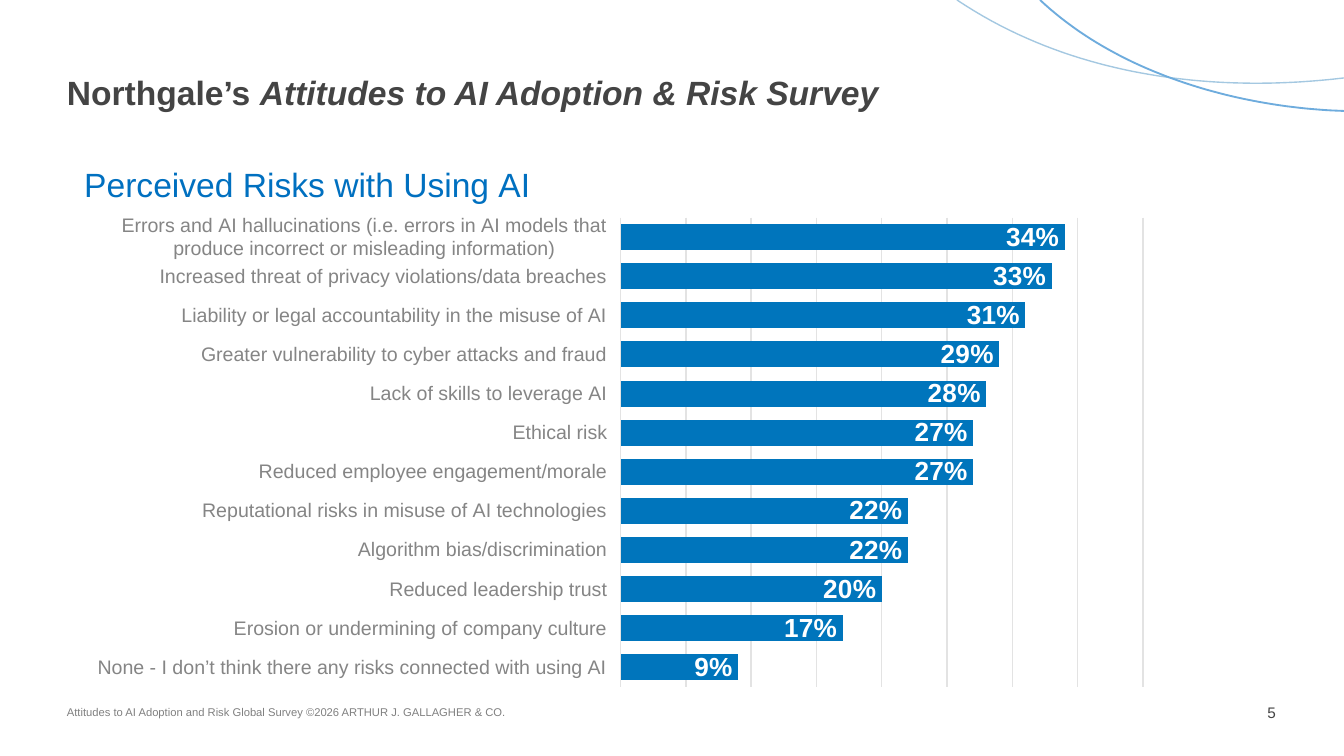
from lxml import etree
from pptx import Presentation
from pptx.chart.data import CategoryChartData
from pptx.dml.color import RGBColor
from pptx.enum.chart import XL_CHART_TYPE, XL_LABEL_POSITION, XL_TICK_LABEL_POSITION, XL_TICK_MARK
from pptx.enum.text import MSO_ANCHOR, PP_ALIGN
from pptx.oxml.ns import qn
from pptx.util import Emu, Pt

BAR = XL_CHART_TYPE.BAR_CLUSTERED
INSIDE_END = XL_LABEL_POSITION.INSIDE_END
LABELS_LOW = XL_TICK_LABEL_POSITION.LOW
NO_TICK = XL_TICK_MARK.NONE
TOP, MIDDLE = MSO_ANCHOR.TOP, MSO_ANCHOR.MIDDLE
LEFT, RIGHT = PP_ALIGN.LEFT, PP_ALIGN.RIGHT

INK = RGBColor(0x44, 0x44, 0x44)
FOOTER_GREY = RGBColor(0x80, 0x80, 0x80)
LABEL_GREY = RGBColor(0x85, 0x85, 0x85)
GRID_GREY = RGBColor(0xE3, 0xE3, 0xE3)
HEADING_BLUE = RGBColor(0x00, 0x70, 0xC0)
BAR_BLUE = RGBColor(0x00, 0x75, 0xBC)
PALE_ARC = RGBColor(0xA4, 0xC8, 0xE1)
BRIGHT_ARC = RGBColor(0x6E, 0xAC, 0xDD)
WHITE = RGBColor(0xFF, 0xFF, 0xFF)

RISKS = [
    ("None - I don’t think there any risks connected with using AI", 0.09),
    ("Erosion or undermining of company culture", 0.17),
    ("Reduced leadership trust", 0.20),
    ("Algorithm bias/discrimination", 0.22),
    ("Reputational risks in misuse of AI technologies", 0.22),
    ("Reduced employee engagement/morale", 0.27),
    ("Ethical risk", 0.27),
    ("Lack of skills to leverage AI", 0.28),
    ("Greater vulnerability to cyber attacks and fraud", 0.29),
    ("Liability or legal accountability in the misuse of AI", 0.31),
    ("Increased threat of privacy violations/data breaches", 0.33),
    ("Errors and AI hallucinations (i.e. errors in AI models that "
     "produce incorrect or misleading information)", 0.34),
]


class SurveySlide:
    """Draws survey elements in one style, with lengths in px."""

    scale = 914400 / 134.4
    font_name = "Arial"

    def __init__(self, slide):
        self.slide = slide

    def emu(self, *lengths):
        return [Emu(round(length * self.scale)) for length in lengths]

    def style(self, font, size, color, bold=False):
        font.name, font.size, font.bold = self.font_name, Pt(size), bold
        font.color.rgb = color

    def text(self, box, runs, size, color, bold=False, align=LEFT, anchor=TOP, wrap=False):
        frame = self.slide.shapes.add_textbox(*self.emu(*box)).text_frame
        frame.margin_left = frame.margin_right = frame.margin_top = frame.margin_bottom = 0
        frame.word_wrap, frame.vertical_anchor = wrap, anchor
        paragraph = frame.paragraphs[0]
        paragraph.alignment = align
        self.style(paragraph.font, size, color, bold)
        for wording, italic in runs:
            run = paragraph.add_run()
            run.text = wording
            if italic:
                run.font.italic = True

    def arc(self, controls, color, width, steps=48):
        points = []
        for step in range(steps + 1):
            t = step / steps
            weights = ((1 - t) ** 3, 3 * t * (1 - t) ** 2, 3 * t * t * (1 - t), t ** 3)
            points.append(tuple(self.emu(*(
                sum(w * point[axis] for w, point in zip(weights, controls))
                for axis in (0, 1)))))
        builder = self.slide.shapes.build_freeform(*points[0])
        builder.add_line_segments(points[1:], close=False)
        curve = builder.convert_to_shape()
        curve.shadow.inherit = False
        curve.fill.background()
        curve.line.color.rgb, curve.line.width = color, Pt(width)

    def place(self, part, index, **settings):
        for old in part.findall(qn("c:layout")):
            part.remove(old)
        layout = etree.Element(qn("c:layout"))
        manual = etree.SubElement(layout, qn("c:manualLayout"))
        for key, value in settings.items():
            etree.SubElement(manual, qn(f"c:{key}")).set("val", str(value))
        part.insert(index, layout)

    def bar_chart(self, box, heading, rows):
        data = CategoryChartData(number_format="0%")
        data.categories = [risk for risk, _ in rows]
        data.add_series("Series 1", [share for _, share in rows])
        chart = self.slide.shapes.add_chart(BAR, *self.emu(*box), data).chart
        chart.has_legend = False
        self.style(chart.font, 10, INK)

        chart.has_title = True
        title = chart.chart_title
        title.include_in_layout = False
        title.text_frame.text = heading
        self.style(title.text_frame.paragraphs[0].font, 18, HEADING_BLUE)
        title_part, = chart.element.xpath("c:chart/c:title")
        self.place(title_part, 1, xMode="edge", yMode="edge", x=0.01, y=0.02)
        plot_part, = chart.element.xpath("c:chart/c:plotArea")
        self.place(plot_part, 0, layoutTarget="inner", xMode="edge", yMode="edge",
                   x=0.497, y=0.129, w=0.469, h=0.844)

        risks, shares = chart.category_axis, chart.value_axis
        risks.major_tick_mark = risks.minor_tick_mark = NO_TICK
        risks.tick_label_position = LABELS_LOW
        self.style(risks.tick_labels.font, 10.5, LABEL_GREY)
        shares.visible = False
        shares.minimum_scale, shares.maximum_scale, shares.major_unit = 0, 0.4, 0.05
        shares.has_major_gridlines = True
        for line in (risks.format.line, shares.major_gridlines.format.line):
            line.color.rgb, line.width = GRID_GREY, Pt(0.75)

        plot = chart.plots[0]
        plot.gap_width, plot.vary_by_categories = 50, False
        bars = plot.series[0]
        bars.format.fill.solid()
        bars.format.fill.fore_color.rgb = BAR_BLUE
        labels = bars.data_labels
        labels.show_value, labels.position = True, INSIDE_END
        labels.number_format, labels.number_format_is_linked = "0%", False
        self.style(labels.font, 14, WHITE, bold=True)


def main():
    deck = Presentation()
    deck.slide_width, deck.slide_height = Emu(9144000), Emu(5143500)
    survey = SurveySlide(deck.slides.add_slide(deck.slide_layouts[6]))
    survey.arc([(1344, 78), (1252, 89), (1093, 91), (957, 0)], PALE_ARC, 0.75)
    survey.arc([(1344, 111), (1245, 108), (1122, 77), (1040, 0)], BRIGHT_ARC, 1)
    survey.text((67, 72, 1030, 50),
                [("Northgale’s ", False), ("Attitudes to AI Adoption & Risk Survey", True)],
                18, INK, bold=True, wrap=True)
    survey.text((67, 706, 445, 13),
                [("Attitudes to AI Adoption and Risk Global Survey "
                  "©2026 ARTHUR J. GALLAGHER & CO.", False)],
                6, FOOTER_GREY, anchor=MIDDLE)
    survey.text((1267, 703, 9, 19), [("5", False)], 8.2, INK, align=RIGHT)
    survey.bar_chart((67, 146, 1114, 556), "Perceived Risks with Using AI", RISKS)
    deck.save("out.pptx")


if __name__ == "__main__":
    main()
